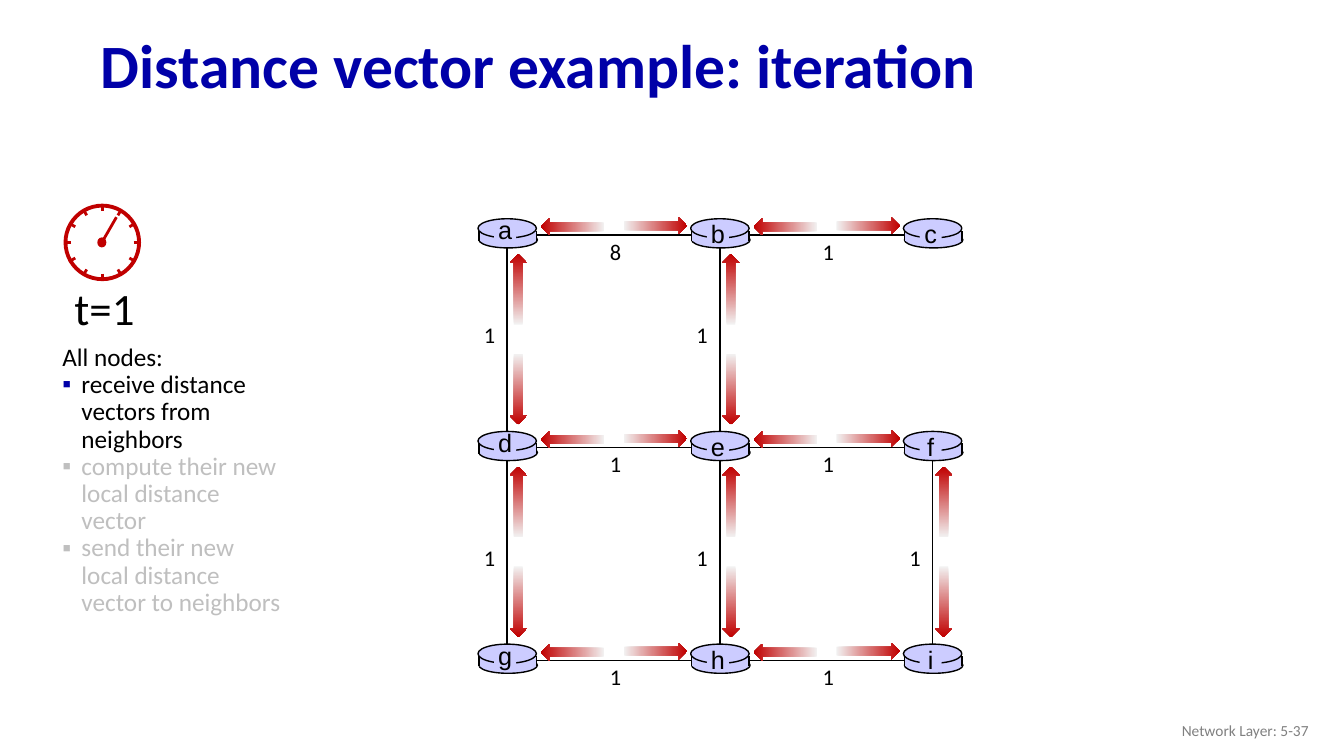
import math

from lxml import etree
from pptx import Presentation, util as u
from pptx.dml.color import RGBColor
from pptx.enum import shapes, text
from pptx.oxml import ns

NAVY = RGBColor(0x00, 0x00, 0xA8)
BLACK = RGBColor(0x00, 0x00, 0x00)
GRAY = RGBColor(0x80, 0x80, 0x80)
FADED = RGBColor(0xBF, 0xBF, 0xBF)
RED = RGBColor(0xC0, 0x00, 0x00)
PALE = RGBColor(0xF2, 0xF2, 0xF2)
LILAC = RGBColor(0xCC, 0xCC, 0xFF)

WIDTH, HEIGHT = 13.33, 7.5
PITCH = 2.11
ROWS = ("abc", "def", "ghi")
EDGES = (("ab", "8"), ("bc", "1"), ("de", "1"), ("ef", "1"), ("gh", "1"), ("hi", "1"),
         ("ad", "1"), ("be", "1"), ("dg", "1"), ("eh", "1"), ("fi", "1"))
CELLS = {name: (c, r) for r, row in enumerate(ROWS) for c, name in enumerate(row)}
STEPS = (("receive distance vectors from neighbors", BLACK, NAVY),
         ("compute their new local distance vector", FADED, FADED),
         ("send their new local distance vector to neighbors", FADED, FADED))


def inches(*values):
    """Convert lengths in inches to slide units."""
    return [u.Inches(v) for v in values]


def apply(obj, **values):
    """Set each given attribute on an object."""
    for name, value in values.items():
        setattr(obj, name, value)


def write(p, words, size, color, font="Calibri", bold=False):
    """Add one formatted run to a paragraph."""
    r = p.add_run()
    r.text = words
    apply(r.font, name=font, size=u.Pt(size), bold=bold)
    r.font.color.rgb = color


def add_text(parent, box, wrap=True, anchor=text.MSO_ANCHOR.TOP):
    """Add an empty text box and return its text frame."""
    tf = parent.add_textbox(*inches(*box)).text_frame
    apply(tf, word_wrap=wrap, vertical_anchor=anchor)
    return tf


def add_label(parent, box, words, size, font="Calibri", align=None):
    """Add a one-line label that does not wrap."""
    p = add_text(parent, box, wrap=False).paragraphs[0]
    p.alignment = align
    write(p, words, size, BLACK, font)


def add_line(parent, start, end, color=BLACK, weight=1):
    """Draw a straight line without a shadow."""
    line = parent.add_connector(shapes.MSO_CONNECTOR.STRAIGHT, *inches(*start, *end))
    line.line.color.rgb = color
    line.line.width = u.Pt(weight)
    etree.SubElement(line._element.spPr, ns.qn("a:effectLst"))


def add_solid(parent, kind, box, fill=None, line=None, weight=1):
    """Draw a preset shape with optional fill and outline."""
    sp = parent.add_shape(kind, *inches(*box))
    sp.shadow.inherit = False
    if fill is None:
        sp.fill.background()
    else:
        sp.fill.solid()
        sp.fill.fore_color.rgb = fill
    if line is None:
        sp.line.fill.background()
    else:
        sp.line.color.rgb = line
        sp.line.width = u.Pt(weight)
    return sp


def add_arrow(parent, center, length, angle):
    """Draw a fading red arrow around a center point."""
    x, y = center
    sp = add_solid(parent, shapes.MSO_SHAPE.RIGHT_ARROW,
                   (x - length / 2, y - 0.085, length, 0.17))
    sp.fill.gradient()
    sp.fill.gradient_angle = 0
    for stop, color, position in zip(sp.fill.gradient_stops, (PALE, RED), (0, 1)):
        stop.color.rgb = color
        stop.position = position
    sp.rotation = angle


def add_title(s, box):
    """Place and format the slide title."""
    title = s.shapes.title
    apply(title, **dict(zip(("left", "top", "width", "height"), inches(*box))))
    tf = title.text_frame
    apply(tf, word_wrap=True, vertical_anchor=text.MSO_ANCHOR.MIDDLE,
          auto_size=text.MSO_AUTO_SIZE.NONE)
    p = tf.paragraphs[0]
    apply(p, alignment=text.PP_ALIGN.LEFT, line_spacing=0.9)
    write(p, "Distance vector example: iteration", 44, NAVY, bold=True)


def add_footer(s, box):
    """Write the chapter and page in the corner."""
    p = add_text(s.shapes, box, anchor=text.MSO_ANCHOR.MIDDLE).paragraphs[0]
    p.alignment = text.PP_ALIGN.RIGHT
    write(p, "Network Layer: 5-37", 11, GRAY)


def add_clock(s, box):
    """Draw the clock with its time below the dial."""
    left, top, side = box
    x, y = left + side / 2, top + side / 2
    clock = s.shapes.add_group_shape().shapes
    oval = shapes.MSO_SHAPE.OVAL
    add_solid(clock, oval, (left, top, side, side), line=RED, weight=2.75)
    for hour in range(12):
        dx, dy = math.sin(hour * math.pi / 6), math.cos(hour * math.pi / 6)
        add_line(clock, (x + 0.31 * dx, y + 0.31 * dy),
                 (x + 0.37 * dx, y + 0.37 * dy), RED, 2)
    add_solid(clock, oval, (x - 0.05, y - 0.05, 0.09, 0.1), RED)
    add_line(clock, (x + 0.14, y - 0.25), (x - 0.01, y + 0.01), RED, 2)
    add_label(clock, (left - 0.01, top + 0.7, 0.81, 0.64), "t=1", 32)


def add_steps(s, box):
    """List what every node does in this iteration."""
    tf = add_text(s.shapes, box)
    p = tf.paragraphs[0]
    p.line_spacing = 0.9
    write(p, "All nodes:", 18, BLACK)
    for words, color, bullet in STEPS:
        p = tf.add_paragraph()
        p.line_spacing = 0.9
        write(p, words, 18, color)
        pPr = p._p.get_or_add_pPr()
        pPr.set("marL", str(u.Inches(0.19)))
        pPr.set("indent", str(-u.Inches(0.19)))
        clr = etree.SubElement(pPr, ns.qn("a:buClr"))
        etree.SubElement(clr, ns.qn("a:srgbClr"), val=str(bullet))
        etree.SubElement(pPr, ns.qn("a:buFont"), typeface="Arial")
        etree.SubElement(pPr, ns.qn("a:buChar"), char="▪")


def add_node(s, name, x, y):
    """Draw one router centered on a grid point."""
    node = s.shapes.add_group_shape().shapes
    oval, rect = shapes.MSO_SHAPE.OVAL, shapes.MSO_SHAPE.RECTANGLE
    add_solid(node, oval, (x - 0.28, y - 0.03, 0.58, 0.16), LILAC, BLACK)
    add_solid(node, rect, (x - 0.28, y - 0.04, 0.57, 0.1), LILAC)
    for side in (x - 0.28, x + 0.29):
        add_line(node, (side, y - 0.04), (side, y + 0.06))
    add_solid(node, oval, (x - 0.29, y - 0.16, 0.58, 0.19), LILAC, BLACK)
    add_solid(node, rect, (x - 0.13, y - 0.11, 0.22, 0.2), LILAC)
    rise = 0.25 if CELLS[name][0] == 0 else 0.21
    add_label(node, (x - 0.19, y - rise, 0.34, 0.4), name, 18, "Arial",
              text.PP_ALIGN.CENTER)


def add_network(s, origin):
    """Draw the links, their costs, the routers and the messages."""
    points = {name: (origin[0] + c * PITCH, origin[1] + r * PITCH)
              for name, (c, r) in CELLS.items()}
    for (start, end), _ in EDGES:
        add_line(s.shapes, points[start], points[end])
    for name, point in points.items():
        add_node(s, name, *point)
    for (start, end), cost in EDGES:
        x, y = points[start]
        row = CELLS[start][1]
        if CELLS[end][1] == row:
            label = (x + 0.92, y - 0.02)
            add_arrow(s.shapes, (x + 0.65, y - 0.08), 0.63, 180)
            add_arrow(s.shapes, (x + 1.47, y - 0.09), 0.63, 0)
        else:
            label = (x - 0.33, y + (0.81, 0.91)[row])
            add_arrow(s.shapes, (x + 0.11, y + 0.54), 0.7, 270)
            add_arrow(s.shapes, (x + 0.11, y + 1.53), 0.7, 90)
        add_label(s.shapes, (*label, 0.33, 0.37), cost, 16)


def main():
    """Build the slide and save it."""
    prs = Presentation()
    apply(prs, slide_width=u.Inches(WIDTH), slide_height=u.Inches(HEIGHT))
    s = prs.slides.add_slide(prs.slide_layouts[5])
    add_title(s, (0.9, 0.19, 11.5, 0.98))
    add_footer(s, (10.08, 7.05, 3, 0.4))
    add_steps(s, (0.52, 3.37, 2.4, 2.83))
    add_clock(s, (0.65, 2.04, 0.73))
    add_network(s, (5.03, 2.33))
    prs.save("out.pptx")


if __name__ == "__main__":
    main()
